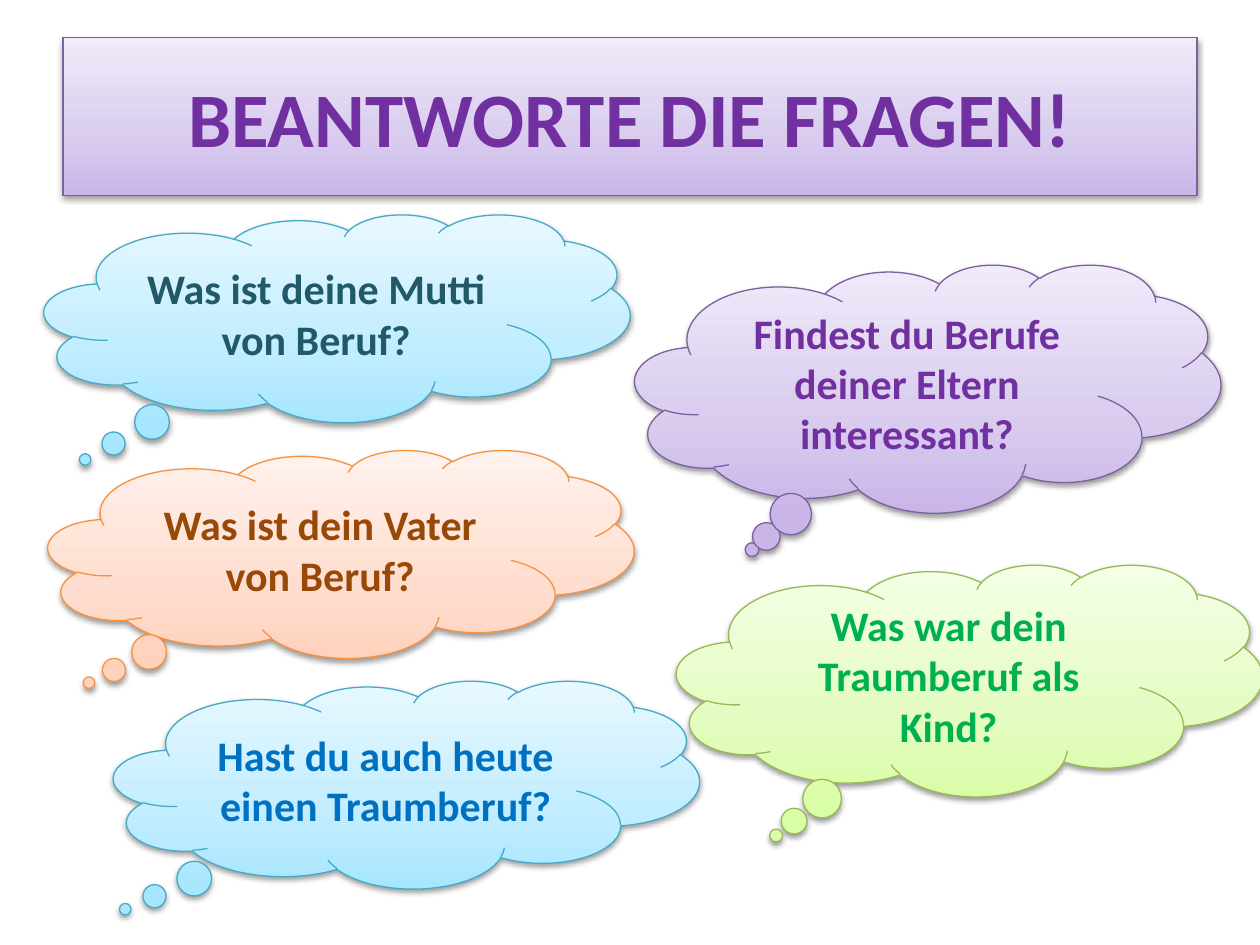
import copy
from dataclasses import dataclass, field

import lxml.etree
import pptx
import pptx.dml.color
import pptx.enum.shapes
import pptx.enum.text
import pptx.oxml.ns
import pptx.util
from pptx.util import Cm


@dataclass(frozen=True)
class Palette:
    gradient: tuple  # bottom to top
    line: str


@dataclass(frozen=True)
class Theme:
    font: str = "Calibri"
    title_size: int = 44
    question_size: int = 24
    line_width: float = 0.75
    gradient_positions: tuple = (0, 0.35, 1)
    palettes: dict = field(default_factory=lambda: {
        "purple": Palette(("C9B5E8", "D8CBEE", "F0EAF9"), "7D60A0"),
        "aqua": Palette(("A7E6FF", "C1EDFF", "E7F8FF"), "46AAC5"),
        "orange": Palette(("FFD2BD", "FFDED0", "FFF2ED"), "F69240"),
        "green": Palette(("DAFDA7", "E4FCC2", "F5FFE7"), "98B955"),
    })
    text_colors: dict = field(default_factory=lambda: {
        "violet": "7030A0",
        "teal": "215968",
        "brown": "984807",
        "leaf": "00B050",
        "blue": "0070C0",
    })


def rgb(value):
    return pptx.dml.color.RGBColor.from_string(value)


def write_text(shape, text, *, font, size, color, bold=True):
    frame = shape.text_frame
    frame.word_wrap = True
    frame.auto_size = pptx.enum.text.MSO_AUTO_SIZE.NONE
    frame.vertical_anchor = pptx.enum.text.MSO_ANCHOR.MIDDLE
    paragraph = frame.paragraphs[0]
    paragraph.alignment = pptx.enum.text.PP_ALIGN.CENTER
    run = paragraph.add_run()
    run.text = text
    run.font.name = font
    run.font.size = pptx.util.Pt(size)
    run.font.bold = bold
    run.font.color.rgb = rgb(color)


def add_soft_shadow(shape):
    shape.shadow.inherit = False
    qn = pptx.oxml.ns.qn
    effects = shape.element.spPr.find(qn("a:effectLst"))
    shadow = lxml.etree.SubElement(
        effects, qn("a:outerShdw"),
        blurRad="40000", dist="20000", dir="5400000", rotWithShape="0")
    color = lxml.etree.SubElement(shadow, qn("a:srgbClr"), val="000000")
    lxml.etree.SubElement(color, qn("a:alpha"), val="38000")


class SlideBuilder:
    def __init__(self, slide, theme):
        self.slide = slide
        self.theme = theme

    def decorate(self, shape, palette_name):
        """Apply the three-stop gradient, outline and shadow of a palette."""
        palette = self.theme.palettes[palette_name]
        shape.fill.gradient()
        shape.fill.gradient_angle = 90
        stop_list = next(shape.element.spPr.iter(pptx.oxml.ns.qn("a:gsLst")))
        stop_list.insert(1, copy.deepcopy(stop_list[0]))
        stops = zip(shape.fill.gradient_stops,
                    self.theme.gradient_positions, palette.gradient)
        for stop, position, color in stops:
            stop.position = position
            stop.color.rgb = rgb(color)
        shape.line.color.rgb = rgb(palette.line)
        shape.line.width = pptx.util.Pt(self.theme.line_width)
        add_soft_shadow(shape)

    def title(self, text, left, top, width, height, palette, color):
        shape = self.slide.shapes.title
        shape.left, shape.top = Cm(left), Cm(top)
        shape.width, shape.height = Cm(width), Cm(height)
        self.decorate(shape, palette)
        write_text(shape, text, font=self.theme.font,
                   size=self.theme.title_size,
                   color=self.theme.text_colors[color])

    def thought(self, text, left, top, height, tail, palette, color, width=11.81):
        """Add a cloud; tail is its tip, relative to the cloud's centre and size."""
        cloud = self.slide.shapes.add_shape(
            pptx.enum.shapes.MSO_SHAPE.CLOUD_CALLOUT,
            Cm(left), Cm(top), Cm(width), Cm(height))
        for index, offset in enumerate(tail):
            cloud.adjustments[index] = offset
        self.decorate(cloud, palette)
        write_text(cloud, text, font=self.theme.font,
                   size=self.theme.question_size,
                   color=self.theme.text_colors[color])


def main():
    presentation = pptx.Presentation()
    presentation.slide_width, presentation.slide_height = Cm(25.4), Cm(19.05)
    title_only = presentation.slide_layouts[5]
    builder = SlideBuilder(presentation.slides.add_slide(title_only), Theme())

    builder.title("BEANTWORTE DIE FRAGEN!", 1.27, 0.76, 22.86, 3.18,
                  "purple", "violet")
    questions = [
        ("Was ist deine Mutti von Beruf?",
         0.89, 4.32, 4.19, (-0.43, 0.68), "aqua", "teal"),
        ("Findest du Berufe deiner Eltern interessant?",
         12.8, 5.33, 5.0, (-0.3, 0.65), "purple", "violet"),
        ("Was ist dein Vater von Beruf?",
         0.97, 9.07, 4.19, (-0.43, 0.62), "orange", "brown"),
        ("Was war dein Traumberuf als Kind?",
         13.64, 11.38, 4.67, (-0.33, 0.67), "green", "leaf"),
        ("Hast du auch heute einen Traumberuf?",
         2.29, 13.72, 4.19, (-0.48, 0.6), "aqua", "blue"),
    ]
    for question in questions:
        builder.thought(*question)

    presentation.save("out.pptx")


if __name__ == "__main__":
    main()
